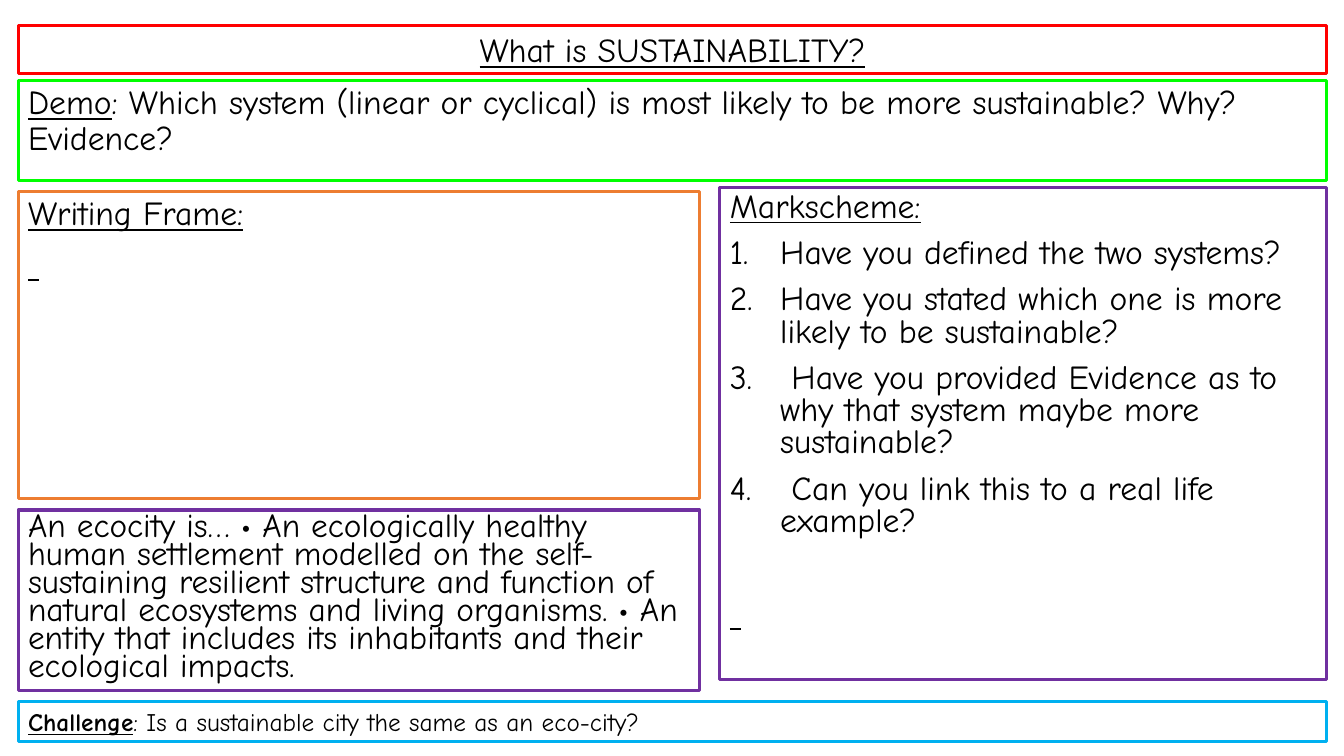
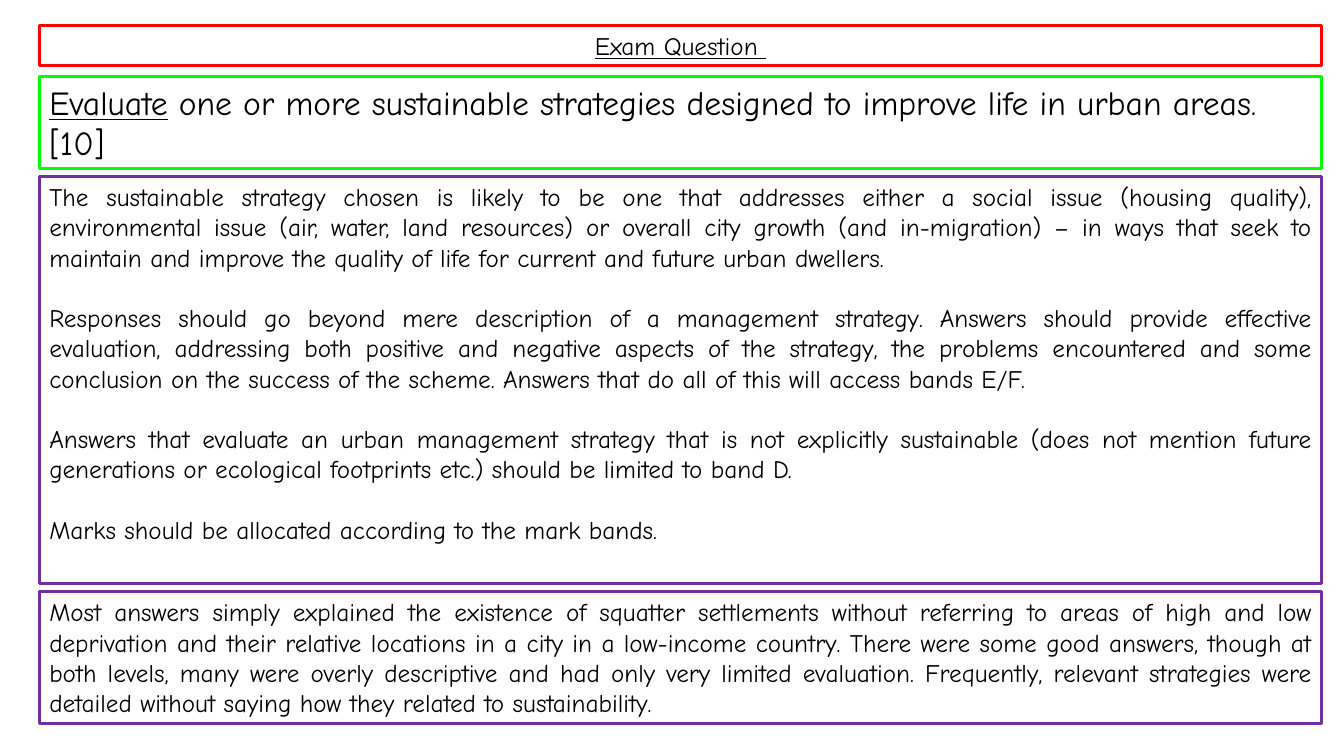
"""Build two framed lesson slides on sustainability."""
from lxml.etree import SubElement
from pptx import Presentation
from pptx.dml.color import RGBColor
from pptx.enum.text import MSO_ANCHOR, MSO_AUTO_SIZE, PP_ALIGN
from pptx.oxml.ns import qn
from pptx.util import Inches, Pt

FONT = "Comic Neue"
BLACK = RGBColor(0, 0, 0)
RED = RGBColor(0xFF, 0, 0)
GREEN = RGBColor(0, 0xFF, 0)
BLUE = RGBColor(0, 0xB0, 0xF0)
ORANGE = RGBColor(0xED, 0x7D, 0x31)
PURPLE = RGBColor(0x70, 0x30, 0xA0)

LESSON_LEFT, LESSON_WIDTH, COLUMN_WIDTH = 0.18, 12.98, 6.76
MARKS_LEFT = 7.14
MARKS_WIDTH = LESSON_LEFT + LESSON_WIDTH - MARKS_LEFT
EXAM_LEFT, EXAM_WIDTH = 0.39, 12.72

TIGHT = {"line_spacing": 0.8, "space_before": 10}
LOOSE = {"line_spacing": 0.9, "space_before": 10}
JUSTIFIED = {"size": 18, "alignment": PP_ALIGN.JUSTIFY}
AFTER_GAP = {"space_before": 21.7}

QUESTIONS = [
    "Have you defined the two systems?",
    "Have you stated which one is more likely to be sustainable?",
    " Have you provided Evidence as to why that system maybe more sustainable?",
    " Can you link this to a real life example?",
]
GUIDANCE = [
    "The sustainable strategy chosen is likely to be one that addresses either a social issue "
    "(housing quality), environmental issue (air, water, land resources) or overall city growth "
    "(and in-migration) – in ways that seek to maintain and improve the quality of life for "
    "current and future urban dwellers.",
    "Responses should go beyond mere description of a management strategy. Answers should provide "
    "effective evaluation, addressing both positive and negative aspects of the strategy, the "
    "problems encountered and some conclusion on the success of the scheme. Answers that do all "
    "of this will access bands E/F.",
    "Answers that evaluate an urban management strategy that is not explicitly sustainable (does "
    "not mention future generations or ecological footprints etc.) should be limited to band D.",
    "Marks should be allocated according to the mark bands.",
]
ECOCITY = (
    "An ecocity is… • An ecologically healthy human settlement modelled on the self-sustaining "
    "resilient structure and function of natural ecosystems and living organisms. • An entity "
    "that includes its inhabitants and their ecological impacts."
)
REPORT = (
    "Most answers simply explained the existence of squatter settlements without referring to "
    "areas of high and low deprivation and their relative locations in a city in a low-income "
    "country. There were some good answers, though at both levels, many were overly descriptive "
    "and had only very limited evaluation. Frequently, relevant strategies were detailed without "
    "saying how they related to sustainability."
)

SLIDES = [
    {
        "title": ("What is SUSTAINABILITY?", 24, (LESSON_LEFT, 0.25, LESSON_WIDTH, 0.48)),
        "panels": [
            ((LESSON_LEFT, 0.8, LESSON_WIDTH, 0.99), GREEN, [
                {"lead": "Demo", "text": ": Which system (linear or cyclical) is most likely to "
                 "be more sustainable? Why? Evidence?", **LOOSE}]),
            ((LESSON_LEFT, 6.96, LESSON_WIDTH, 0.4), BLUE, [
                {"lead": "Challenge", "lead_bold": True, "size": 18,
                 "text": ": Is a sustainable city the same as an eco-city?"}]),
            ((LESSON_LEFT, 1.9, COLUMN_WIDTH, 3.05), ORANGE, [
                {"lead": "Writing Frame:", **LOOSE}, {"lead": " ", **LOOSE}]),
            ((MARKS_LEFT, 1.86, MARKS_WIDTH, 4.88), PURPLE, [
                {"lead": "Markscheme:", **TIGHT},
                *({"text": question, "numbered": True, **TIGHT} for question in QUESTIONS),
                {"lead": " ", **TIGHT, "space_before": 43}]),
            ((LESSON_LEFT, 5.06, COLUMN_WIDTH, 1.79), PURPLE, [
                {"text": ECOCITY, "size": 23.8, "line_spacing": 0.7, "space_before": 10}]),
        ],
    },
    {
        "title": ("Exam Question ", 18, (EXAM_LEFT, 0.25, EXAM_WIDTH, 0.4)),
        "panels": [
            ((EXAM_LEFT, 0.76, EXAM_WIDTH, 0.91), GREEN, [
                {"lead": "Evaluate", "text": " one or more sustainable strategies designed to "
                 "improve life in urban areas. [10]"}]),
            ((EXAM_LEFT, 1.75, EXAM_WIDTH, 4.04), PURPLE, [
                {"text": GUIDANCE[0], **JUSTIFIED},
                *({"text": text, **JUSTIFIED, **AFTER_GAP} for text in GUIDANCE[1:])]),
            ((EXAM_LEFT, 5.87, EXAM_WIDTH, 1.31), PURPLE, [{"text": REPORT, **JUSTIFIED}]),
        ],
    },
]


def number_paragraph(paragraph):
    properties = paragraph._p.get_or_add_pPr()
    properties.set("marL", str(Inches(0.5)))
    properties.set("indent", str(-Inches(0.5)))
    SubElement(properties, qn("a:buFont"), typeface="+mj-lt")
    SubElement(properties, qn("a:buAutoNum"), type="arabicPeriod")


def write_paragraph(paragraph, lead="", text="", size=24, lead_bold=False, numbered=False,
                    alignment=PP_ALIGN.LEFT, line_spacing=1.0, space_before=0):
    paragraph.alignment = alignment
    paragraph.line_spacing = line_spacing
    paragraph.space_before = Pt(space_before)
    if numbered:
        number_paragraph(paragraph)
    paragraph.font.name = FONT
    paragraph.font.size = Pt(size)
    paragraph.font.color.rgb = BLACK
    if lead:
        run = paragraph.add_run()
        run.text = lead
        run.font.underline = True
        run.font.bold = lead_bold
    if text:
        paragraph.add_run().text = text


def frame_panel(shape, color, paragraphs, anchor=MSO_ANCHOR.TOP):
    shape.line.color.rgb = color
    shape.line.width = Pt(2.25)
    frame = shape.text_frame
    frame.word_wrap = True
    frame.auto_size = MSO_AUTO_SIZE.NONE
    frame.vertical_anchor = anchor
    for index, content in enumerate(paragraphs):
        paragraph = frame.add_paragraph() if index else frame.paragraphs[0]
        write_paragraph(paragraph, **content)


def build_slide(presentation, content):
    slide = presentation.slides.add_slide(presentation.slide_layouts[5])
    text, size, box = content["title"]
    title = slide.shapes.title
    title.left, title.top, title.width, title.height = map(Inches, box)
    heading = {"lead": text, "size": size, "alignment": PP_ALIGN.CENTER}
    frame_panel(title, RED, [heading], MSO_ANCHOR.MIDDLE)
    for box, color, paragraphs in content["panels"]:
        panel = slide.shapes.add_textbox(*map(Inches, box))
        frame_panel(panel, color, paragraphs)


def main():
    presentation = Presentation()
    presentation.slide_width = Inches(13.33)
    presentation.slide_height = Inches(7.5)
    for content in SLIDES:
        build_slide(presentation, content)
    presentation.save("out.pptx")


if __name__ == "__main__":
    main()
